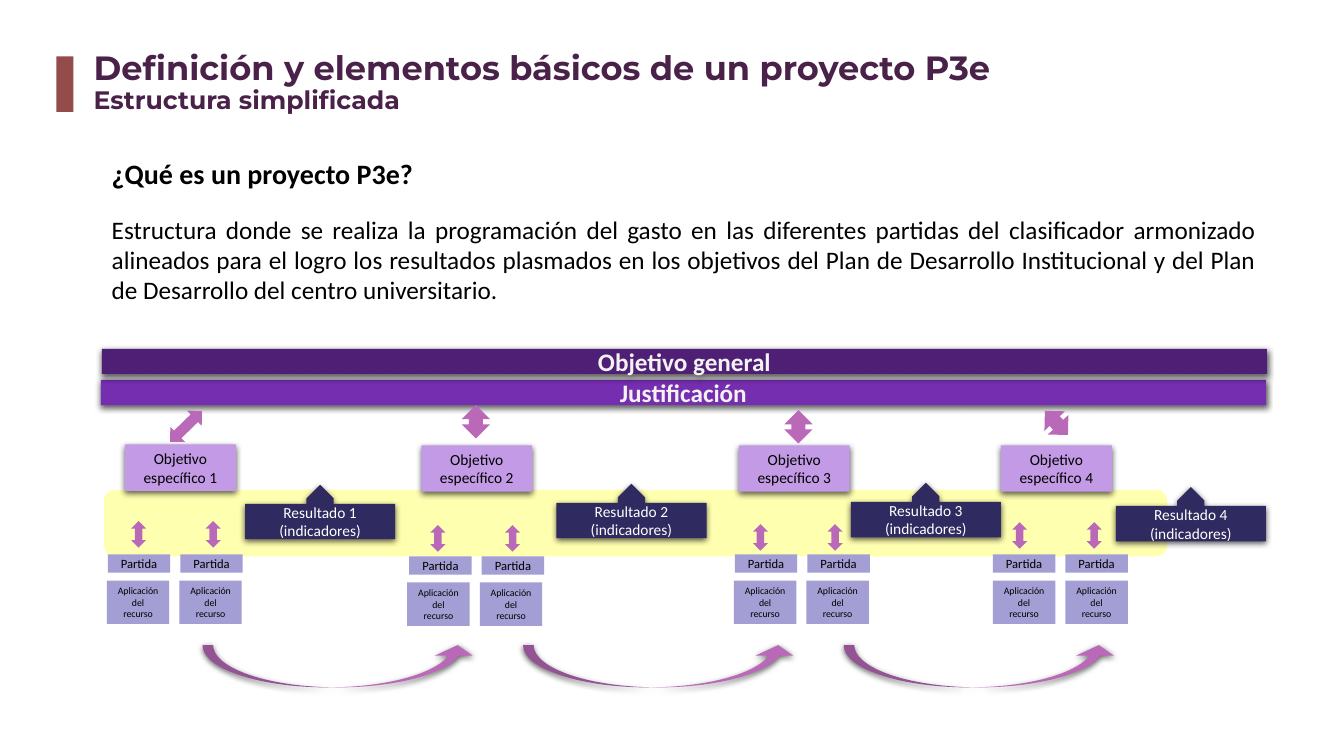
from dataclasses import dataclass
from typing import Any, Optional

from lxml import etree
from pptx import Presentation
from pptx import util as u
from pptx.dml import color
from pptx.enum import shapes, text
from pptx.oxml import ns

Kind = shapes.MSO_SHAPE
Align = text.PP_ALIGN
PINK, LAVENDER, LILAC, NAVY, BLACK = "BA69B8", "A39ED4", "C39AE5", "2F2B60", "000000"


@dataclass
class Style:
    fill: str
    kind: Any = Kind.RECTANGLE
    shadow: bool = False
    size: float = 11
    ink: str = BLACK
    bold: bool = False
    adjust: tuple[float, ...] = ()
    opacity: Optional[int] = None


@dataclass
class Line:
    words: str
    size: float
    font: str = "Calibri"
    ink: str = BLACK
    bold: bool = False
    align: Any = Align.CENTER
    spacing: float = 1.0
    before: float = 0


@dataclass
class Branch:
    number: int
    objective: tuple[float, float]
    link: tuple[float, float, float, float]
    turn: float
    result: tuple[float, float]
    arrow: tuple[float, float]
    item: tuple[float, float]
    resource_x: float


BAND = Style("FFFF00", Kind.ROUNDED_RECTANGLE, opacity=31)
MARK = Style("934C49")
GENERAL = Style("4F1F76", shadow=True, size=18, ink="F2F2F2", bold=True)
REASON = Style("762EB1", shadow=True, size=18, ink="F2F2F2", bold=True)
OBJECTIVE = Style(LILAC, shadow=True)
RESULT = Style(NAVY, Kind.UP_ARROW_CALLOUT, True, ink="FFFFFF", adjust=(0.5, 0.25, 0.25, 0.65))
ITEM = Style(LAVENDER, size=9)
RESOURCE = Style(LAVENDER, size=7)
ARROW = Style(PINK, Kind.UP_DOWN_ARROW)
LOOP = Style(PINK, Kind.CURVED_UP_ARROW, True, adjust=(0.25, 0.898, 0.25))

BRANCHES = [
    Branch(1, (89.3, 317.5), (125.3, 288.7, 15.1, 31.7), 45.8,
           (175, 346.3), (93.6, 372.2), (77, 396), 76.3),
    Branch(2, (301, 318.2), (329.8, 289.4, 20.2, 23.8), 0,
           (397.4, 345.6), (307.4, 375.1), (292.3, 397.4), 290.9),
    Branch(3, (527.8, 318.2), (560.2, 293, 20.2, 23.8), 0,
           (607.7, 344.9), (537.8, 374.4), (524.9, 396), 524.2),
    Branch(4, (715, 318.2), (744.5, 290.2, 20.2, 23.8), 316.3,
           (797, 347.8), (722.9, 373), (709.2, 396), 709.2),
]
ITEM_PITCH, ARROW_PITCH, LOOP_PITCH = 51.8, 53.3, 229


def rgb(value: str) -> color.RGBColor:
    return color.RGBColor.from_string(value)


def write(tf: Any, lines: list[Line], anchor: Any) -> None:
    for name, value in {"word_wrap": True, "vertical_anchor": anchor}.items():
        setattr(tf, name, value)
    for i, line in enumerate(lines):
        p = tf.add_paragraph() if i else tf.paragraphs[0]
        layout = {"alignment": line.align, "line_spacing": line.spacing,
                  "space_before": u.Pt(line.before)}
        for name, value in layout.items():
            setattr(p, name, value)
        r = p.add_run()
        r.text = line.words
        r.font.color.rgb = rgb(line.ink)
        look = {"name": line.font, "size": u.Pt(line.size), "bold": line.bold}
        for name, value in look.items():
            setattr(r.font, name, value)


def add_text(s: Any, box: tuple[float, ...], lines: list[Line], anchor: Any) -> None:
    write(s.shapes.add_textbox(*map(u.Pt, box)).text_frame, lines, anchor)


def set_opacity(parent: Any, percent: int) -> None:
    etree.SubElement(parent, ns.qn("a:alpha"), val=str(percent * 1000))


def add_shadow(sp: Any) -> None:
    effects = sp._element.spPr.find(ns.qn("a:effectLst"))
    outer = etree.SubElement(effects, ns.qn("a:outerShdw"), blurRad=str(u.Pt(4.5)),
                             dist=str(u.Pt(1.5)), dir="5400000", rotWithShape="0")
    set_opacity(etree.SubElement(outer, ns.qn("a:srgbClr"), val=BLACK), 63)


def draw(s: Any, style: Style, box: tuple[float, ...], *words: str, turn: float = 0) -> None:
    sp = s.shapes.add_shape(style.kind, *map(u.Pt, box))
    sp.rotation = turn
    sp.shadow.inherit = False
    sp.fill.solid()
    sp.fill.fore_color.rgb = rgb(style.fill)
    sp.line.fill.background()
    for i, value in enumerate(style.adjust):
        sp.adjustments[i] = value
    if style.opacity is not None:
        set_opacity(sp._element.spPr.find(ns.qn("a:solidFill"))[0], style.opacity)
    if style.shadow:
        add_shadow(sp)
    if words:
        lines = [Line(w, style.size, ink=style.ink, bold=style.bold) for w in words]
        write(sp.text_frame, lines, text.MSO_ANCHOR.MIDDLE)


def draw_branch(s: Any, b: Branch) -> None:
    draw(s, OBJECTIVE, (*b.objective, 79.2, 33.1), f"Objetivo específico {b.number}")
    draw(s, ARROW, b.link, turn=b.turn)
    x, y = b.item
    for i in range(2):
        step = i * ITEM_PITCH
        draw(s, ITEM, (x + step, y, 44.6, 13), "Partida")
        draw(s, RESOURCE, (b.resource_x + step, y + 18.7, 44.6, 31), "Aplicación del recurso")
        draw(s, ARROW, (b.arrow[0] + i * ARROW_PITCH, b.arrow[1], 10.8, 19))
    draw(s, RESULT, (*b.result, 107.3, 38.9), f"Resultado {b.number}", "(indicadores)")


def main() -> None:
    prs = Presentation()
    prs.slide_width, prs.slide_height = u.Pt(960), u.Pt(540)
    s = prs.slides.add_slide(prs.slide_layouts[6])
    draw(s, BAND, (74.2, 349.9, 759.6, 47.5))
    draw(s, MARK, (40.3, 40.3, 12.2, 39.6))
    heading = {"font": "Montserrat", "ink": "4A2249", "bold": True,
               "align": Align.LEFT, "spacing": 0.9}
    add_text(s, (59.8, 33.1, 654.5, 53.3), [
        Line("Definición y elementos básicos de un proyecto P3e", 24, **heading),
        Line("Estructura simplificada", 18, **heading),
    ], text.MSO_ANCHOR.TOP)
    add_text(s, (72.7, 108, 831.6, 113.8), [
        Line("¿Qué es un proyecto P3e?", 20, bold=True, align=Align.JUSTIFY),
        Line("Estructura donde se realiza la programación del gasto en las diferentes partidas "
             "del clasificador armonizado alineados para el logro los resultados plasmados en "
             "los objetivos del Plan de Desarrollo Institucional y del Plan de Desarrollo del "
             "centro universitario.", 18, align=Align.JUSTIFY, before=17),
    ], text.MSO_ANCHOR.MIDDLE)
    draw(s, REASON, (72, 271.4, 832.3, 18), "Justificación")
    draw(s, GENERAL, (72.7, 249.1, 832.3, 18), "Objetivo general")
    for branch in BRANCHES:
        draw_branch(s, branch)
    for i in range(len(BRANCHES) - 1):
        draw(s, LOOP, (144.7 + i * LOOP_PITCH, 460.8, 195.8, 30.2))
    prs.save("out.pptx")


if __name__ == "__main__":
    main()
